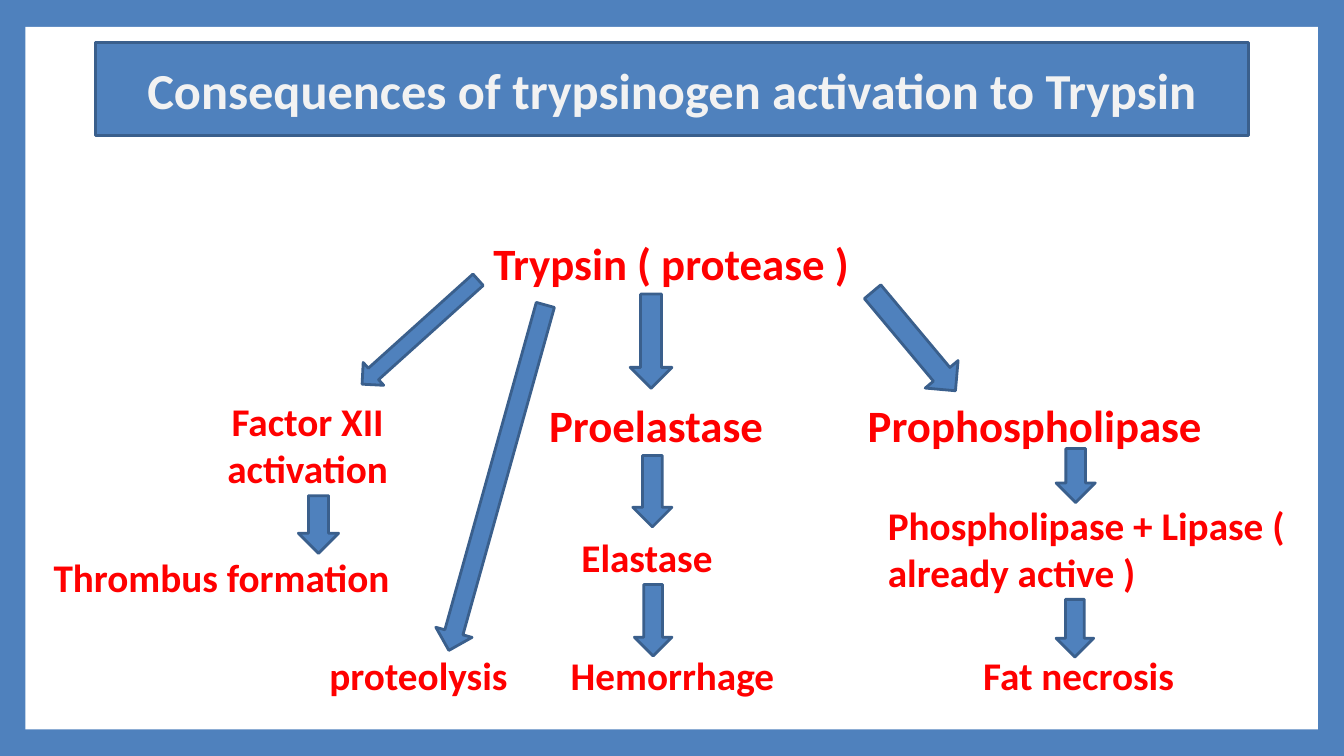
from lxml import etree
from pptx import Presentation
from pptx.dml.color import RGBColor
from pptx.enum.shapes import MSO_SHAPE as Shape
from pptx.enum.text import MSO_ANCHOR as Anchor, MSO_AUTO_SIZE as AutoSize, PP_ALIGN as Align
from pptx.oxml.ns import qn
from pptx.util import Cm, Pt

COLORS = {"blue": "4F81BD", "edge": "3A5F8C", "white": "FFFFFF",
          "title": "F2F2F2", "label": "FF0000"}
FONT = "Calibri"
LARGE, SMALL = 24, 21
LABEL_HEIGHT = {LARGE: 1.27, SMALL: 1.14}
BRANCH_TOP, OUTCOME_TOP = 7.39, 12.19


def color(name):
    return RGBColor.from_string(COLORS[name])


def paint(shape):
    shape.fill.solid()
    shape.fill.fore_color.rgb = color("blue")
    shape.line.color.rgb = color("edge")
    shape.line.width = Pt(1.5)


def write(frame, text, size, tint, align):
    para = frame.paragraphs[0]
    para.alignment = align
    span = para.add_run()
    span.text = text
    span.font.name = FONT
    span.font.size = Pt(size)
    span.font.bold = True
    span.font.color.rgb = color(tint)


def add_label(slide, text, left, top, width, size=SMALL, lines=1, align=Align.CENTER):
    height = LABEL_HEIGHT[size] + (lines - 1) * 0.92
    box = slide.shapes.add_textbox(Cm(left), Cm(top), Cm(width), Cm(height))
    box.text_frame.word_wrap = True
    box.text_frame.auto_size = AutoSize.SHAPE_TO_FIT_TEXT
    write(box.text_frame, text, size, "label", align)


def add_arrow(slide, left, top, width, height, angle=0):
    arrow = slide.shapes.add_shape(Shape.DOWN_ARROW, Cm(left), Cm(top), Cm(width), Cm(height))
    arrow.rotation = angle
    arrow.shadow.inherit = False
    paint(arrow)


def add_panel(slide, left, top, width, height):
    slide.background.fill.solid()
    slide.background.fill.fore_color.rgb = color("blue")
    panel = slide.shapes.add_shape(Shape.RECTANGLE, Cm(left), Cm(top), Cm(width), Cm(height))
    panel.shadow.inherit = False
    panel.fill.solid()
    panel.fill.fore_color.rgb = color("white")
    panel.line.fill.background()
    # The panel lies behind the title
    slide.shapes.element.insert(2, panel.element)


def add_banner(slide, left, top, width, height):
    title = slide.shapes.title
    title.left, title.top, title.width, title.height = map(Cm, (left, top, width, height))
    # Give the title its rounded top corners
    outline = etree.SubElement(title.element.spPr, qn("a:prstGeom"), prst="round2SameRect")
    etree.SubElement(outline, qn("a:avLst"))
    paint(title)
    frame = title.text_frame
    frame.word_wrap = True
    frame.auto_size = AutoSize.NONE
    frame.vertical_anchor = Anchor.MIDDLE
    write(frame, "Consequences of trypsinogen activation to Trypsin", 27, "title", Align.CENTER)


def add_source(slide, left, top, width):
    add_label(slide, "Trypsin ( protease )", left, top, width, LARGE)
    # Arrows to the four branches
    for dx, dy, across, length, angle in [
        (-1.21, 0.46, 0.58, 2.95, 48),
        (0.18, 1.3, 0.71, 6.78, 15.6),
        (3.05, 1.22, 0.79, 1.78, 0),
        (8.01, 0.89, 0.81, 2.44, 320.1),
    ]:
        add_arrow(slide, left + dx, top + dy, across, length, angle)


def add_clotting_branch(slide, left, top, width):
    add_label(slide, "Factor XII activation", left + 3.25, top, width - 3.25, lines=2)
    add_arrow(slide, left + 5.26, top + 1.98, 0.76, 1.09)
    add_label(slide, "Thrombus formation", left, top + 2.95, width)


def add_elastase_branch(slide, left, top, width):
    add_label(slide, "Proelastase", left + 0.31, top, width - 0.28, LARGE)
    add_arrow(slide, left + 3.02, top + 1.22, 0.74, 1.35)
    add_label(slide, "Elastase", left, top + 2.57, width)
    add_arrow(slide, left + 3.05, top + 3.66, 0.71, 1.35)
    add_label(slide, "Hemorrhage", left + 0.71, OUTCOME_TOP, width - 0.46)


def add_lipase_branch(slide, left, top, width):
    add_label(slide, "Prophospholipase", left, top, width - 0.99, LARGE, align=Align.LEFT)
    add_arrow(slide, left + 3.81, top + 1.09, 0.74, 1.02)
    add_label(slide, "Phospholipase + Lipase ( already active )", left + 0.38, top + 1.96,
              width - 0.38, lines=2, align=Align.LEFT)
    add_arrow(slide, left + 3.81, top + 3.94, 0.71, 1.09)
    add_label(slide, "Fat necrosis", left + 0.82, OUTCOME_TOP, width - 1.6)


def main():
    deck = Presentation()
    deck.slide_width, deck.slide_height = Cm(25.4), Cm(14.29)
    page = deck.slides.add_slide(deck.slide_layouts[5])

    # Frame and title
    add_panel(page, 0.48, 0.51, 24.43, 13.28)
    add_banner(page, 1.8, 0.81, 21.8, 1.75)

    # Trypsin and its branches
    add_source(page, 8.86, 4.34, 7.65)
    add_clotting_branch(page, 0.38, BRANCH_TOP, 7.62)
    add_label(page, "proteolysis", 5.18, OUTCOME_TOP, 5.46)
    add_elastase_branch(page, 8.94, BRANCH_TOP, 6.58)
    add_lipase_branch(page, 16.15, BRANCH_TOP, 8.43)

    deck.save("out.pptx")


if __name__ == "__main__":
    main()
